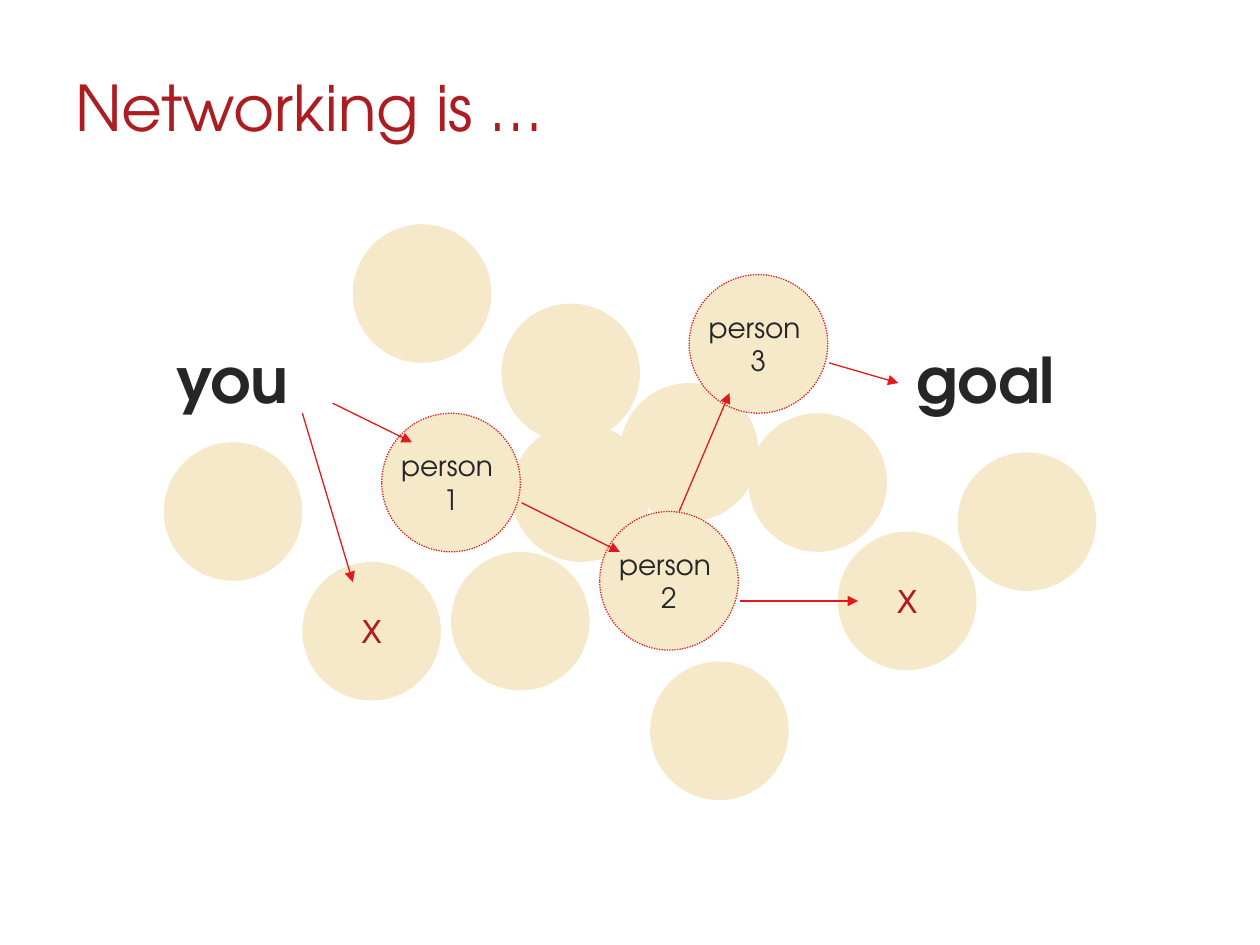
from dataclasses import dataclass

from lxml.etree import SubElement
from pptx import Presentation
from pptx.dml.color import RGBColor
from pptx.enum.dml import MSO_LINE
from pptx.enum.shapes import MSO_CONNECTOR, MSO_SHAPE
from pptx.enum.text import MSO_ANCHOR, PP_ALIGN
from pptx.oxml.ns import qn
from pptx.util import Inches, Pt


@dataclass(frozen=True)
class Theme:
    sand: RGBColor = RGBColor(0xF5, 0xE9, 0xCA)
    crimson: RGBColor = RGBColor(0xAC, 0x1D, 0x22)
    red: RGBColor = RGBColor(0xE2, 0x1A, 0x1A)
    ink: RGBColor = RGBColor(0x26, 0x26, 0x26)
    font: str = "TeX Gyre Adventor"
    mark_font: str = "DejaVu Sans"
    heading: int = 36
    mark: int = 18
    label: int = 16
    line: float = 0.75
    diameter: float = 1.1


class NetworkSlide:
    def __init__(self, page, theme):
        self.page = page
        self.theme = theme

    def add_text(self, frame, lines, size, color, font, bold=False, align=PP_ALIGN.LEFT):
        para = frame.paragraphs[0]
        para.alignment = align
        for index, line in enumerate(lines):
            if index:
                para.add_line_break()
            span = para.add_run()
            span.text = line
            span.font.size = Pt(size)
            span.font.name = font
            span.font.bold = bold
            span.font.color.rgb = color

    def heading(self, text, left, top, width, height, color, **style):
        box = self.page.shapes.add_textbox(
            Inches(left), Inches(top), Inches(width), Inches(height))
        frame = box.text_frame
        frame.word_wrap = True
        frame.vertical_anchor = MSO_ANCHOR.MIDDLE
        self.add_text(frame, [text], self.theme.heading, color, self.theme.font, **style)

    def circle(self, left, top):
        size = Inches(self.theme.diameter)
        shape = self.page.shapes.add_shape(
            MSO_SHAPE.OVAL, Inches(left), Inches(top), size, size)
        shape.shadow.inherit = False
        shape.fill.solid()
        shape.fill.fore_color.rgb = self.theme.sand
        shape.line.fill.background()
        shape.text_frame.word_wrap = False
        shape.text_frame.vertical_anchor = MSO_ANCHOR.MIDDLE
        return shape

    def person(self, number, left, top):
        shape = self.circle(left, top)
        shape.line.color.rgb = self.theme.red
        shape.line.width = Pt(self.theme.line)
        shape.line.dash_style = MSO_LINE.ROUND_DOT
        self.add_text(shape.text_frame, ["person ", str(number)], self.theme.label,
                      self.theme.ink, self.theme.font, align=PP_ALIGN.CENTER)

    def dead_end(self, left, top):
        shape = self.circle(left, top)
        self.add_text(shape.text_frame, ["X"], self.theme.mark, self.theme.crimson,
                      self.theme.mark_font, align=PP_ALIGN.CENTER)

    def arrow(self, start, end):
        arrow = self.page.shapes.add_connector(
            MSO_CONNECTOR.STRAIGHT, *(Inches(value) for value in start + end))
        arrow.line.color.rgb = self.theme.red
        arrow.line.width = Pt(self.theme.line)
        properties = arrow._element.spPr
        SubElement(properties.get_or_add_ln(), qn("a:tailEnd"), type="triangle")
        SubElement(properties, qn("a:effectLst"))


def main():
    deck = Presentation()
    deck.slide_width, deck.slide_height = Inches(10), Inches(7.5)
    theme = Theme()
    slide = NetworkSlide(deck.slides.add_slide(deck.slide_layouts[6]), theme)

    # Title
    slide.heading("Networking is …", 0.5, 0.3, 9, 1.09, theme.crimson)

    # Contacts behind the route
    for left, top in [(4.92, 3.04), (4.06, 3.36)]:
        slide.circle(left, top)

    # Start and end of the route
    slide.heading("you", 1.3, 2.65, 2.05, 0.7, theme.ink, bold=True)
    slide.heading("goal", 6.42, 2.65, 2.05, 0.7, theme.ink, bold=True,
                  align=PP_ALIGN.RIGHT)

    # People along the route
    for number, (left, top) in enumerate([(3.03, 3.28), (4.76, 4.06), (5.47, 2.18)], 1):
        slide.person(number, left, top)

    # Other contacts
    for left, top in [(3.98, 2.41), (2.8, 1.78), (3.58, 4.38), (1.3, 3.51),
                      (5.16, 5.25), (7.6, 3.59), (5.94, 3.28)]:
        slide.circle(left, top)

    # Dead ends
    for left, top in [(6.65, 4.22), (2.4, 4.46)]:
        slide.dead_end(left, top)

    # Arrows: the route first, then the two dead ends
    for start, end in [
        ((2.64, 3.2), (3.27, 3.51)),
        ((4.14, 3.99), (4.92, 4.38)),
        ((5.39, 4.06), (5.79, 3.12)),
        ((6.58, 2.88), (7.13, 3.04)),
        ((5.87, 4.77), (6.81, 4.77)),
        ((2.4, 3.28), (2.8, 4.62)),
    ]:
        slide.arrow(start, end)

    deck.save("out.pptx")


if __name__ == "__main__":
    main()
